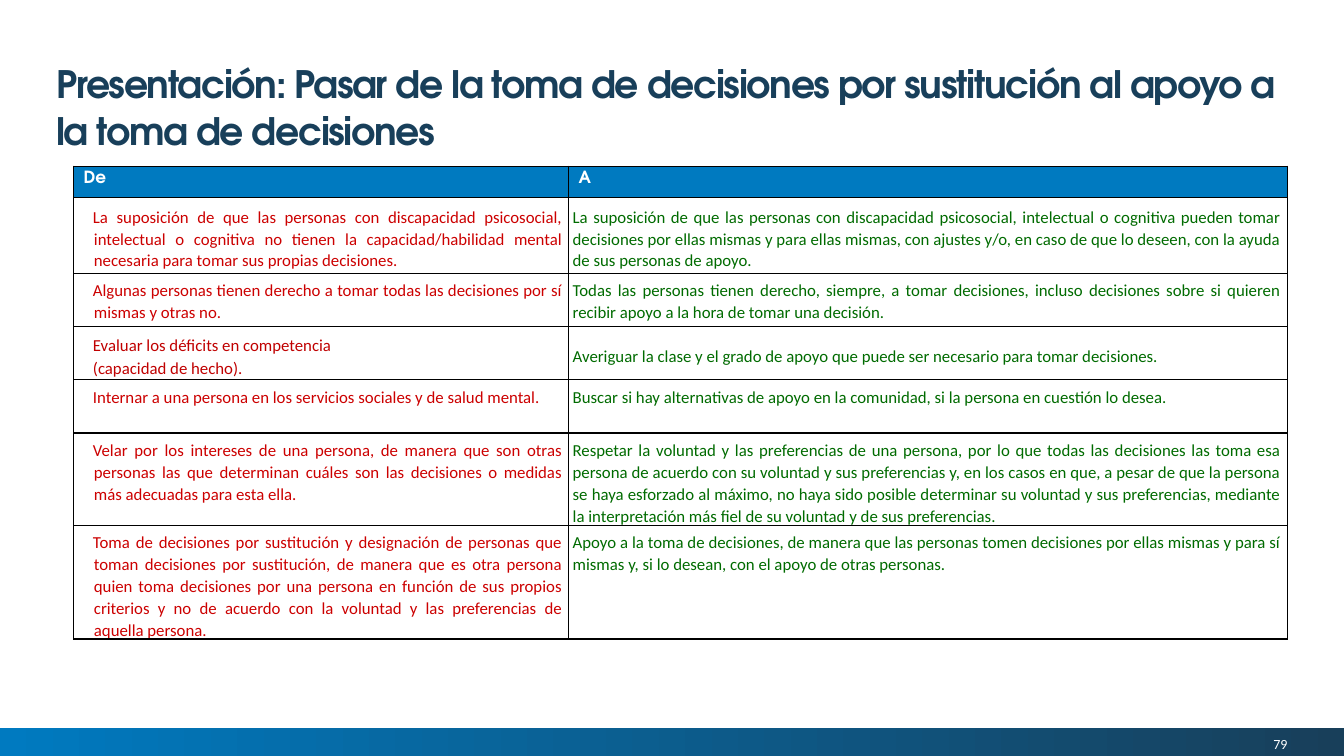
import pptx
import pptx.dml.color
import pptx.enum.shapes
import pptx.enum.text
import pptx.oxml
import pptx.oxml.ns
import pptx.util

Pt = pptx.util.Pt
ALIGN = pptx.enum.text.PP_ALIGN
ANCHOR = pptx.enum.text.MSO_ANCHOR

HEADING_FONT, BODY_FONT = "TeX Gyre Adventor", "Calibri"
BLUE, NAVY, WHITE, BLACK = "007AC0", "183F5A", "FFFFFF", "000000"
RED, DARK_RED, GREEN = "CC0000", "C00000", "006B00"
SLIDE_WIDTH, SLIDE_HEIGHT = 960, 540

TITLE = ("Presentación: Pasar de la toma de decisiones por sustitución "
         "al apoyo a la toma de decisiones")
HEADINGS = ("De", "A")
COLUMN_WIDTHS = (353.5, 513.4)
HEADING_HEIGHT = 22.5

# Each row: height, anchor, colour of the first column, first text, second text
CHANGES = [
    (54, ANCHOR.MIDDLE, RED,
     "La suposición de que las personas con discapacidad psicosocial, intelectual o cognitiva "
     "no tienen la capacidad/habilidad mental necesaria para tomar sus propias decisiones.",
     "La suposición de que las personas con discapacidad psicosocial, intelectual o cognitiva "
     "pueden tomar decisiones por ellas mismas y para ellas mismas, con ajustes y/o, en caso de "
     "que lo deseen, con la ayuda de sus personas de apoyo."),
    (38, ANCHOR.TOP, RED,
     "Algunas personas tienen derecho a tomar todas las decisiones por sí mismas y otras no.",
     "Todas las personas tienen derecho, siempre, a tomar decisiones, incluso decisiones sobre "
     "si quieren recibir apoyo a la hora de tomar una decisión."),
    (38, ANCHOR.MIDDLE, DARK_RED,
     "Evaluar los déficits en competencia\n(capacidad de hecho).",
     "Averiguar la clase y el grado de apoyo que puede ser necesario para tomar decisiones."),
    (38, ANCHOR.TOP, RED,
     "Internar a una persona en los servicios sociales y de salud mental.",
     "Buscar si hay alternativas de apoyo en la comunidad, si la persona en cuestión lo desea."),
    (54, ANCHOR.TOP, RED,
     "Velar por los intereses de una persona, de manera que son otras personas las que "
     "determinan cuáles son las decisiones o medidas más adecuadas para esta ella.",
     "Respetar la voluntad y las preferencias de una persona, por lo que todas las decisiones "
     "las toma esa persona de acuerdo con su voluntad y sus preferencias y, en los casos en que, "
     "a pesar de que la persona se haya esforzado al máximo, no haya sido posible determinar su "
     "voluntad y sus preferencias, mediante la interpretación más fiel de su voluntad y de sus "
     "preferencias."),
    (51, ANCHOR.TOP, RED,
     "Toma de decisiones por sustitución y designación de personas que toman decisiones por "
     "sustitución, de manera que es otra persona quien toma decisiones por una persona en "
     "función de sus propios criterios y no de acuerdo con la voluntad y las preferencias de "
     "aquella persona.",
     "Apoyo a la toma de decisiones, de manera que las personas tomen decisiones por ellas "
     "mismas y para sí mismas y, si lo desean, con el apoyo de otras personas."),
]


def rgb(value):
    """Turn a hex string into a colour."""
    return pptx.dml.color.RGBColor.from_string(value)


def format_runs(paragraph, font_name, size, colour, bold=False):
    """Apply one font to every run of a paragraph."""
    for run in paragraph.runs:
        run.font.name = font_name
        run.font.size = Pt(size)
        run.font.bold = bold
        run.font.color.rgb = rgb(colour)


def set_margins(target, left, top, right, bottom):
    """Set the four insets of a cell or a text frame."""
    target.margin_left, target.margin_top = Pt(left), Pt(top)
    target.margin_right, target.margin_bottom = Pt(right), Pt(bottom)


def add_cell_borders(cell, colour, width):
    """Draw all four sides of a cell, ahead of its fill."""
    properties = cell._tc.get_or_add_tcPr()
    for position, side in enumerate(("lnL", "lnR", "lnT", "lnB")):
        properties.insert(position, pptx.oxml.parse_xml(
            f'<a:{side} {pptx.oxml.ns.nsdecls("a")} w="{Pt(width)}"><a:solidFill>'
            f'<a:srgbClr val="{colour}"/></a:solidFill></a:{side}>'))


def fill_heading_cell(cell, heading):
    """Write a column heading on blue."""
    cell.text_frame.text = heading
    format_runs(cell.text_frame.paragraphs[0], HEADING_FONT, 12, WHITE, True)
    cell.fill.solid()
    cell.fill.fore_color.rgb = rgb(BLUE)
    add_cell_borders(cell, BLACK, 1)


def fill_change_cell(cell, statement, colour, indent, anchor):
    """Write one justified statement in a body cell."""
    cell.text_frame.text = statement
    cell.vertical_anchor = anchor
    set_margins(cell, 3, 4.3, 4.3, 0)
    paragraphs = cell.text_frame.paragraphs
    for paragraph in paragraphs:
        paragraph.alignment = ALIGN.JUSTIFY
        paragraph.line_spacing = 1.07
        properties = paragraph._p.get_or_add_pPr()
        properties.set("marL", str(Pt(indent)))
        properties.set("indent", str(Pt(-0.7)))
        format_runs(paragraph, BODY_FONT, 12, colour)
    for paragraph in paragraphs[:-1]:
        paragraph.space_after = Pt(0.9)
    cell.fill.background()
    add_cell_borders(cell, BLACK, 1)


def add_changes_table(slide, left, top):
    """Add the table that sets each old practice against the new one."""
    heights = [HEADING_HEIGHT] + [change[0] for change in CHANGES]
    changes = slide.shapes.add_table(
        len(heights), len(HEADINGS), Pt(left), Pt(top),
        Pt(sum(COLUMN_WIDTHS)), Pt(sum(heights))).table
    changes.horz_banding = False
    for column, width in zip(changes.columns, COLUMN_WIDTHS):
        column.width = Pt(width)
    for row, height in zip(changes.rows, heights):
        row.height = Pt(height)
    for index, heading in enumerate(HEADINGS):
        fill_heading_cell(changes.cell(0, index), heading)
    for index, (_, anchor, colour, before, after) in enumerate(CHANGES, 1):
        fill_change_cell(changes.cell(index, 0), before, colour, 11.5, anchor)
        fill_change_cell(changes.cell(index, 1), after, GREEN, 0, anchor)


def add_title(slide, left, top, width, height):
    """Place and format the title placeholder."""
    title = slide.shapes.title
    title.left, title.top, title.width, title.height = map(Pt, (left, top, width, height))
    frame = title.text_frame
    frame.text = TITLE
    frame.word_wrap = True
    frame.auto_size = pptx.enum.text.MSO_AUTO_SIZE.NONE
    frame.vertical_anchor = ANCHOR.TOP
    heading = frame.paragraphs[0]
    heading.alignment = ALIGN.LEFT
    heading.line_spacing = Pt(33)
    format_runs(heading, HEADING_FONT, 27, NAVY, True)
    for run in heading.runs:
        run._r.get_or_add_rPr().set("spc", "-100")


def add_footer(slide, left, top, width, height):
    """Add the gradient band with the page number at its right."""
    band = slide.shapes.add_shape(
        pptx.enum.shapes.MSO_SHAPE.RECTANGLE, Pt(left), Pt(top), Pt(width), Pt(height))
    band.shadow.inherit = False
    band.line.fill.background()
    band.fill.gradient()
    band.fill.gradient_angle = 0
    for stop, position, colour in zip(band.fill.gradient_stops, (0, 1), (BLUE, NAVY)):
        stop.position = position
        stop.color.rgb = rgb(colour)
    number = slide.shapes.add_textbox(
        Pt(left + width - 170), Pt(top + 3), Pt(129.6), Pt(17)).text_frame
    number.text = "79"
    number.word_wrap = True
    number.vertical_anchor = ANCHOR.MIDDLE
    set_margins(number, 0, 0, 0, 0)
    number.paragraphs[0].alignment = ALIGN.RIGHT
    format_runs(number.paragraphs[0], BODY_FONT, 10, WHITE)


def main():
    """Build and save the slide."""
    deck = pptx.Presentation()
    deck.slide_width, deck.slide_height = Pt(SLIDE_WIDTH), Pt(SLIDE_HEIGHT)
    slide = deck.slides.add_slide(deck.slide_layouts[5])
    add_footer(slide, 0, SLIDE_HEIGHT - 20, SLIDE_WIDTH, 20)
    add_title(slide, 33, 39.5, 891, 35)
    add_changes_table(slide, 52.6, 118.8)
    deck.save("out.pptx")


if __name__ == "__main__":
    main()
